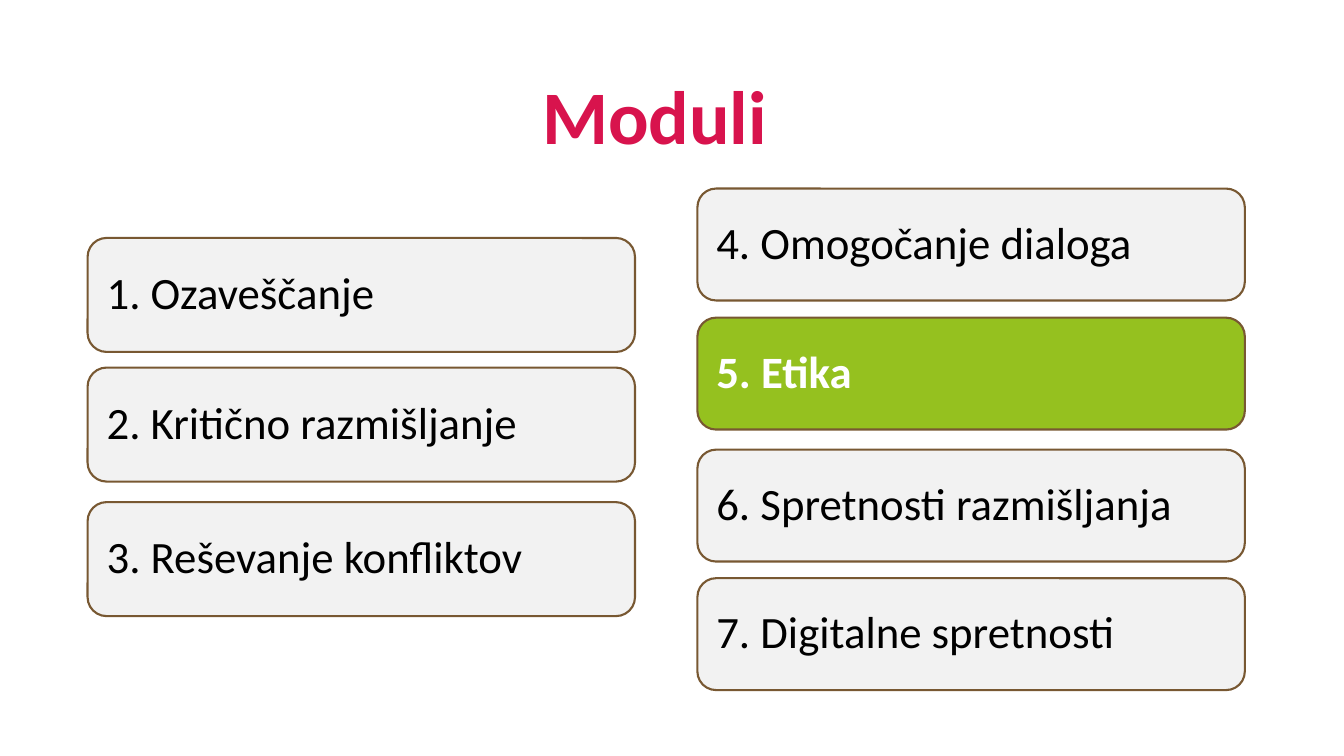
"""Build the module overview slide with the ethics module highlighted."""
import pptx
import pptx.dml.color
import pptx.enum.shapes
import pptx.enum.text
import pptx.util

Pt = pptx.util.Pt
TITLE = "Moduli"
CURRENT = "5. Etika"
COLUMNS = [
    {"left": 62.6, "height": 81.4, "modules": [
        ("1. Ozaveščanje", 170),
        ("2. Kritično razmišljanje", 262.6),
        ("3. Reševanje konfliktov", 358.7)]},
    {"left": 498.2, "height": 79.9, "modules": [
        ("4. Omogočanje dialoga", 134.7),
        (CURRENT, 226.9),
        ("6. Spretnosti razmišljanja", 321.2),
        ("7. Digitalne spretnosti", 413)]},
]
BOX_WIDTH = 391
INSET = 9.6


def rgb(color):
    return pptx.dml.color.RGBColor.from_string(color)


def set_text(tf, text, size, color, bold, align, anchor):
    tf.text = text
    tf.word_wrap = True
    tf.auto_size = pptx.enum.text.MSO_AUTO_SIZE.NONE
    tf.vertical_anchor = anchor
    p = tf.paragraphs[0]
    p.alignment = align
    p.line_spacing = 0.9
    p.space_before = Pt(0)
    p.font.name = "Calibri"
    p.font.size = Pt(size)
    p.font.bold = bold
    p.font.color.rgb = rgb(color)


def add_module(s, text, left, top, height):
    current = text == CURRENT
    sp = s.shapes.add_shape(pptx.enum.shapes.MSO_SHAPE.ROUNDED_RECTANGLE,
                            Pt(left), Pt(top), Pt(BOX_WIDTH), Pt(height))
    sp.shadow.inherit = False
    sp.fill.solid()
    sp.fill.fore_color.rgb = rgb("95C11F" if current else "F2F2F2")
    sp.line.color.rgb = rgb("785832")
    sp.line.width = Pt(1.5)
    tf = sp.text_frame
    tf.margin_left = tf.margin_right = tf.margin_top = tf.margin_bottom = Pt(INSET)
    set_text(tf, text, 32, "FFFFFF" if current else "000000", current,
             pptx.enum.text.PP_ALIGN.LEFT, pptx.enum.text.MSO_ANCHOR.MIDDLE)


def main():
    prs = pptx.Presentation()
    prs.slide_width, prs.slide_height = Pt(960), Pt(540)
    s = prs.slides.add_slide(prs.slide_layouts[5])
    title = s.shapes.title
    title.left, title.top = Pt(0.7), Pt(-21.6)
    title.width, title.height = Pt(933.8), Pt(140.4)
    set_text(title.text_frame, TITLE, 54, "D8134D", True,
             pptx.enum.text.PP_ALIGN.CENTER, pptx.enum.text.MSO_ANCHOR.BOTTOM)
    for column in COLUMNS:
        for text, top in column["modules"]:
            add_module(s, text, column["left"], top, column["height"])
    prs.save("out.pptx")


if __name__ == "__main__":
    main()
